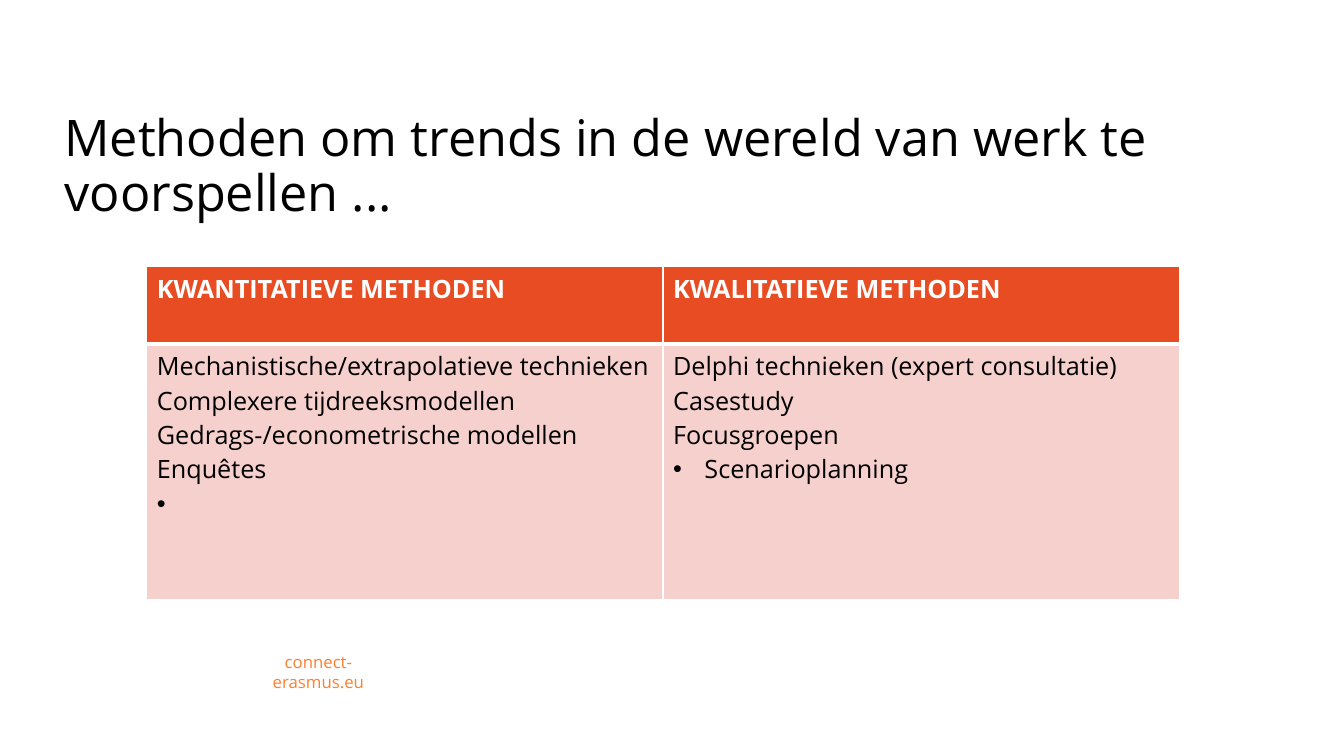
from lxml.etree import SubElement
from pptx import Presentation
from pptx.dml.color import RGBColor
from pptx.enum.text import MSO_ANCHOR, MSO_AUTO_SIZE, PP_ALIGN
from pptx.oxml.ns import qn
from pptx.util import Cm, Pt

FONT = "Open Sans"
COLORS = {
    "text": "000000",
    "white": "FFFFFF",
    "header": "E84C22",
    "body": "F6D0CD",
    "footer": "FF7F2A",
}
METHODS = {
    "KWANTITATIEVE METHODEN": [
        "Mechanistische/extrapolatieve technieken",
        "Complexere tijdreeksmodellen",
        "Gedrags-/econometrische modellen",
        "Enquêtes",
        " ",
    ],
    "KWALITATIEVE METHODEN": [
        "Delphi technieken (expert consultatie)",
        "Casestudy",
        "Focusgroepen",
        "Scenarioplanning",
    ],
}


def rgb(name):
    return RGBColor.from_string(COLORS[name])


def write(p, text, size=18, color="text", bold=False, align=PP_ALIGN.LEFT, bullet=False):
    p.alignment = align
    if bullet:
        pPr = p._p.get_or_add_pPr()
        pPr.set("marL", str(Cm(0.79)))
        pPr.set("indent", str(-Cm(0.79)))
        SubElement(pPr, qn("a:buFont"), typeface="Arial")
        SubElement(pPr, qn("a:buChar"), char="•")
    r = p.add_run()
    r.text = text
    r.font.name = FONT
    r.font.size = Pt(size)
    r.font.bold = bold
    r.font.color.rgb = rgb(color)


def set_borders(cell, **widths):
    """Draw white cell borders, with widths in points by side (L, R, T, B)."""
    tcPr = cell._tc.get_or_add_tcPr()
    for side in "LRTB":
        ln = SubElement(tcPr, qn(f"a:ln{side}"), w=str(Pt(widths.get(side, 1))))
        fill = SubElement(ln, qn("a:solidFill"))
        SubElement(fill, qn("a:srgbClr"), val=COLORS["white"])


def fill_cell(cell, color, **widths):
    set_borders(cell, **widths)
    cell.fill.solid()
    cell.fill.fore_color.rgb = rgb(color)


def add_title(s, text):
    title = s.shapes.title
    title.left, title.top, title.width, title.height = Cm(1.37), Cm(3.56), Cm(29.2), Cm(2.16)
    tf = title.text_frame
    tf.word_wrap = True
    tf.auto_size = MSO_AUTO_SIZE.NONE
    tf.vertical_anchor = MSO_ANCHOR.BOTTOM
    p = tf.paragraphs[0]
    p.line_spacing = 0.9
    write(p, text, size=36)


def add_methods_table(s):
    heights = Cm(1.96), Cm(6.43)
    table = s.shapes.add_table(2, 2, Cm(3.7), Cm(6.71), Cm(26.02), sum(heights)).table
    for row, height in zip(table.rows, heights):
        row.height = height
    for col, (heading, methods) in enumerate(METHODS.items()):
        header, body = table.cell(0, col), table.cell(1, col)
        fill_cell(header, "header", B=3)
        fill_cell(body, "body", T=3)
        write(header.text_frame.paragraphs[0], heading, color="white", bold=True)
        tf = body.text_frame
        for i, method in enumerate(methods):
            p = tf.add_paragraph() if i else tf.paragraphs[0]
            write(p, method, bullet=i == len(methods) - 1)


def add_footer(s, text):
    tf = s.shapes.add_textbox(Cm(5.79), Cm(16.54), Cm(4.47), Cm(0.76)).text_frame
    tf.word_wrap = True
    tf.vertical_anchor = MSO_ANCHOR.MIDDLE
    write(tf.paragraphs[0], text, size=12, color="footer", align=PP_ALIGN.CENTER)


def main():
    prs = Presentation()
    prs.slide_width, prs.slide_height = Cm(33.87), Cm(19.05)
    s = prs.slides.add_slide(prs.slide_layouts[5])
    add_title(s, "Methoden om trends in de wereld van werk te voorspellen ...")
    add_methods_table(s)
    add_footer(s, "connect-erasmus.eu")
    prs.save("out.pptx")


if __name__ == "__main__":
    main()
